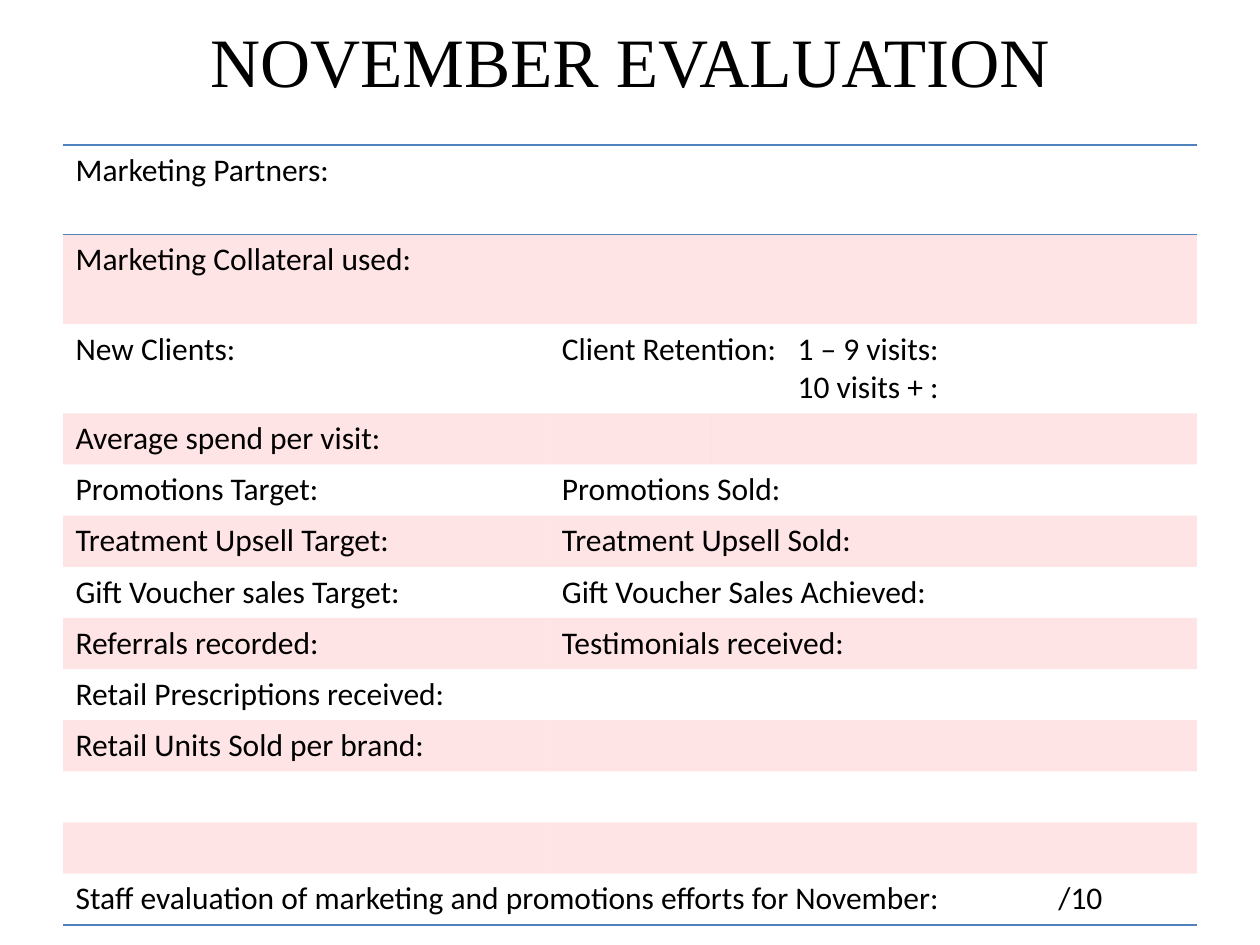
from dataclasses import dataclass

from lxml import etree
from pptx import Presentation
from pptx.dml.color import RGBColor
from pptx.enum.text import MSO_ANCHOR, PP_ALIGN
from pptx.oxml.ns import qn
from pptx.util import Inches, Pt

CENTER = PP_ALIGN.CENTER
MIDDLE = MSO_ANCHOR.MIDDLE
PLAIN_TABLE_STYLE = "{2D5ABB26-0587-4C30-8999-92F81FD0307C}"


@dataclass(frozen=True)
class Theme:
    title_font: str = "Times New Roman"
    body_font: str = "Calibri"
    title_size: float = 39.6
    body_size: float = 18
    text: str = "000000"
    band: str = "FF7C80"
    band_alpha: int = 20
    rule: str = "4F81BD"
    rule_width: float = 1


theme = Theme()


def style_font(font, name, size):
    font.name = name
    font.size = Pt(size)
    font.color.rgb = RGBColor.from_string(theme.text)


def add_rule(cell, side):
    properties = cell._tc.get_or_add_tcPr()
    line = etree.SubElement(properties, qn(f"a:{side}"), w=str(Pt(theme.rule_width)))
    fill = etree.SubElement(line, qn("a:solidFill"))
    etree.SubElement(fill, qn("a:srgbClr"), val=theme.rule)


presentation = Presentation()
presentation.slide_width = Inches(10)
presentation.slide_height = Inches(7.5)
slide = presentation.slides.add_slide(presentation.slide_layouts[5])

title = slide.shapes.title
title.left, title.top = Inches(0.5), Inches(0.13)
title.width, title.height = Inches(9), Inches(0.69)
title.text_frame.text = "NOVEMBER EVALUATION"
title.text_frame.vertical_anchor = MIDDLE
title_paragraph = title.text_frame.paragraphs[0]
title_paragraph.alignment = CENTER
style_font(title_paragraph.runs[0].font, theme.title_font, theme.title_size)

FULL, SPLIT, OPEN = 0, 1, None
rows = [
    (FULL, "Marketing Partners:", ""),
    (FULL, "Marketing Collateral used:", ""),
    (SPLIT, "New Clients:", "Client Retention:\t1 – 9 visits:\n\t10 visits + :"),
    (OPEN, "Average spend per visit:", ""),
    (SPLIT, "Promotions Target:", "Promotions Sold:"),
    (SPLIT, "Treatment Upsell Target:", "Treatment Upsell Sold:"),
    (SPLIT, "Gift Voucher sales Target:", "Gift Voucher Sales Achieved:"),
    (SPLIT, "Referrals recorded:", "Testimonials received:"),
    (OPEN, "Retail Prescriptions received:", ""),
    (SPLIT, "Retail Units Sold per brand:", ""),
    (SPLIT, "", ""),
    (SPLIT, "", ""),
    (FULL, "Staff evaluation of marketing and promotions efforts for November:\t/10", ""),
]
tall_rows = 3
last_row = len(rows) - 1
tab_stops = [Inches(7.8), Inches(1.87)]
column_widths = [3.86] + [1.285] * 4

table = slide.shapes.add_table(
    len(rows), len(column_widths), Inches(0.5), Inches(1.15), Inches(9), Inches(6.19)
).table
table.first_row = False
table.horz_banding = False
table._tbl.tblPr.find(qn("a:tableStyleId")).text = PLAIN_TABLE_STYLE
for column, width in zip(table.columns, column_widths):
    column.width = Inches(width)

for row_index, (merge_from, label, value) in enumerate(rows):
    table.rows[row_index].height = Inches(0.71 if row_index < tall_rows else 0.406)
    cells = list(table.rows[row_index].cells)
    for cell in cells:
        if row_index == 0:
            add_rule(cell, "lnT")
        if row_index in (0, last_row):
            add_rule(cell, "lnB")
        if row_index % 2:
            cell.fill.solid()
            cell.fill.fore_color.rgb = RGBColor.from_string(theme.band)
            color = cell._tc.tcPr.find(f".//{qn('a:srgbClr')}")
            etree.SubElement(color, qn("a:alpha"), val=str(theme.band_alpha * 1000))
        else:
            cell.fill.background()
    if merge_from is not OPEN:
        cells[merge_from].merge(cells[-1])

    for column_index, text in enumerate((label, value)):
        text_frame = cells[column_index].text_frame
        text_frame.text = text
        for paragraph in text_frame.paragraphs:
            if "\t" in paragraph.text:
                tab_list = etree.SubElement(paragraph._p.get_or_add_pPr(), qn("a:tabLst"))
                etree.SubElement(tab_list, qn("a:tab"), pos=str(tab_stops[column_index]), algn="l")
            for run in paragraph.runs:
                style_font(run.font, theme.body_font, theme.body_size)

presentation.save("out.pptx")
